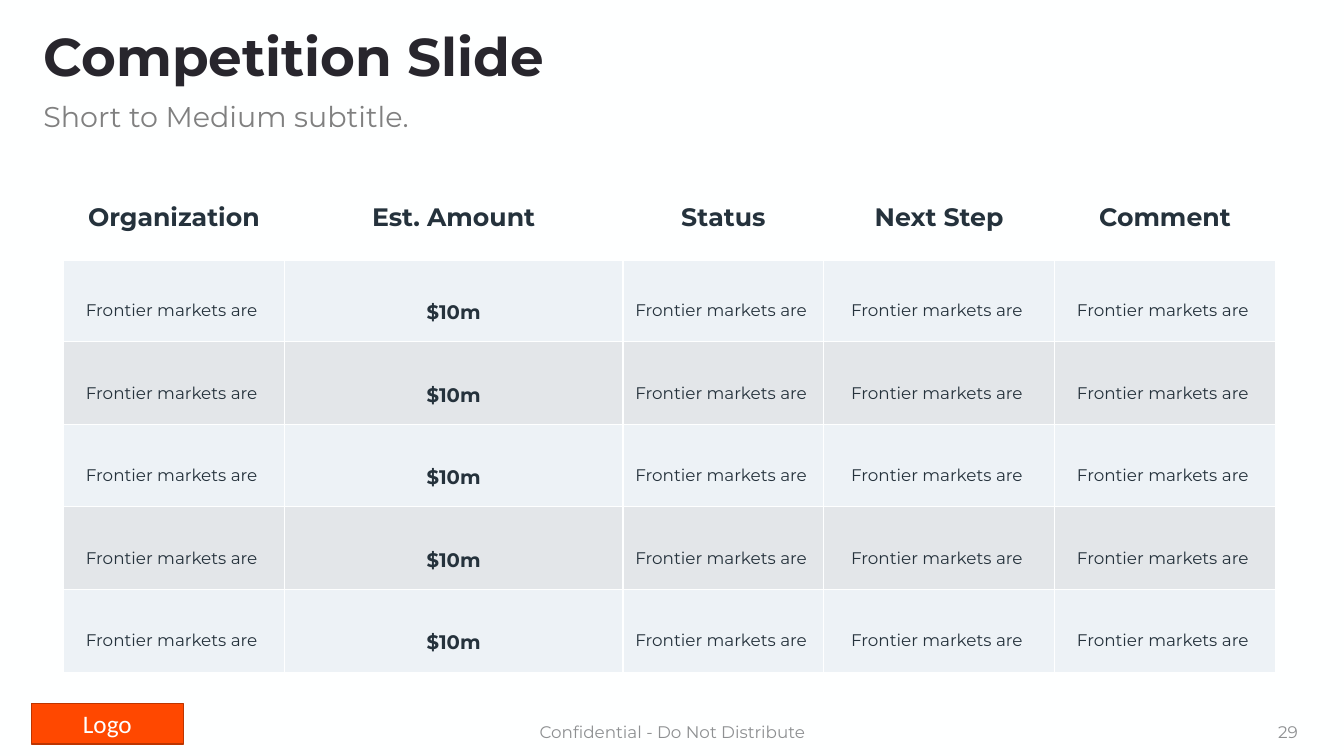
"""Build the competition slide with its table of organizations."""
from lxml.etree import SubElement
from pptx import Presentation
from pptx.dml.color import RGBColor
from pptx.enum.shapes import MSO_SHAPE
from pptx.enum.text import MSO_ANCHOR, MSO_AUTO_SIZE, PP_ALIGN
from pptx.oxml.ns import qn
from pptx.util import Inches, Pt

TITLE = "Competition Slide"
SUBTITLE = "Short to Medium subtitle."
HEADS = ["Organization", "Est. Amount", "Status", "Next Step", "Comment"]
NOTE = "Frontier markets are "
ROWS = [[NOTE, "$10m", NOTE, NOTE, NOTE]] * 5
WIDTHS = [2.19, 3.36, 1.99, 2.29, 2.19]
HEIGHT = 0.82
AMOUNT = 1
FOOTERS = [
    ("Confidential - Do Not Distribute", 4.42, 4.5, PP_ALIGN.CENTER),
    ("29", 9.97, 3, PP_ALIGN.RIGHT),
]

FONT = "Montserrat"
WHITE = RGBColor(0xFE, 0xFF, 0xFF)
BLACK = RGBColor(0x28, 0x26, 0x2D)
GRAY = RGBColor(0x80, 0x80, 0x80)
PALE = RGBColor(0x8E, 0x90, 0x92)
NAVY = RGBColor(0x25, 0x32, 0x3C)
ORANGE = RGBColor(0xFF, 0x48, 0x00)
RUST = RGBColor(0xBD, 0x35, 0x00)
BANDS = [RGBColor(0xBE, 0xCC, 0xDD), RGBColor(0x93, 0x9D, 0xA9)]


def write(frame, text, size, color, align, bold=False, font=FONT):
    frame.text = text
    frame.word_wrap = True
    frame.vertical_anchor = MSO_ANCHOR.MIDDLE
    line = frame.paragraphs[0]
    line.alignment = align
    for run in line.runs:
        run.font.name = font
        run.font.size = Pt(size)
        run.font.bold = bold
        run.font.color.rgb = color
    return line


def place(shape, left, top, width, height):
    shape.left, shape.top = Inches(left), Inches(top)
    shape.width, shape.height = Inches(width), Inches(height)


def edge(cell, row):
    props = cell._tc.get_or_add_tcPr()
    for side in "LRTB":
        thick = (row, side) in [(0, "B"), (1, "T")]
        line = SubElement(props, qn(f"a:ln{side}"), w=str(Pt(3 if thick else 1)))
        fill = SubElement(line, qn("a:solidFill"))
        SubElement(fill, qn("a:srgbClr"), val=str(WHITE))


def tint(cell, color):
    cell.fill.solid()
    cell.fill.fore_color.rgb = color
    shade = cell._tc.tcPr.find(qn("a:solidFill"))[0]
    SubElement(shade, qn("a:alpha"), val="25000")


def add_grid(slide):
    data = [HEADS] + ROWS
    grid = slide.shapes.add_table(
        len(data), len(HEADS), Inches(0.63), Inches(1.75),
        Inches(sum(WIDTHS)), Inches(HEIGHT * len(data))).table
    for col, width in zip(grid.columns, WIDTHS):
        col.width = Inches(width)
    for r, texts in enumerate(data):
        grid.rows[r].height = Inches(HEIGHT)
        for c, text in enumerate(texts):
            cell = grid.cell(r, c)
            edge(cell, r)
            strong = r == 0 or c == AMOUNT
            size = 18 if r == 0 else 14 if strong else 12
            write(cell.text_frame, text, size, NAVY, PP_ALIGN.CENTER, strong)
            cell.vertical_anchor = MSO_ANCHOR.MIDDLE
            if r == 0:
                cell.fill.background()
            else:
                cell.margin_top = Inches(0.29 if strong else 0.25)
                tint(cell, BANDS[(r - 1) % 2])


def add_heads(slide):
    title, body = slide.shapes.title, slide.placeholders[1]
    place(title, 0.33, 0.25, 12.63, 0.67)
    place(body, 0.33, 0.98, 12.63, 0.4)
    line = write(title.text_frame, TITLE, 38, BLACK, PP_ALIGN.LEFT, True)
    line.line_spacing = 0.9
    line = write(body.text_frame, SUBTITLE, 20.4, GRAY, PP_ALIGN.LEFT)
    line.line_spacing = 0.8
    line.space_before = Pt(0)
    props = line._p.get_or_add_pPr()
    props.set("marL", "0")
    props.set("indent", "0")
    SubElement(props, qn("a:buNone"))
    for shape in (title, body):
        shape.text_frame.auto_size = MSO_AUTO_SIZE.NONE


def add_foot(slide):
    logo = slide.shapes.add_shape(
        MSO_SHAPE.RECTANGLE, Inches(0.31), Inches(6.98), Inches(1.51), Inches(0.4))
    logo.shadow.inherit = False
    logo.fill.solid()
    logo.fill.fore_color.rgb = ORANGE
    logo.line.color.rgb = RUST
    logo.line.width = Pt(1)
    write(logo.text_frame, "Logo", 18, WHITE, PP_ALIGN.CENTER, font="Calibri")
    for text, left, width, align in FOOTERS:
        box = slide.shapes.add_textbox(
            Inches(left), Inches(7.06), Inches(width), Inches(0.4))
        write(box.text_frame, text, 12, PALE, align)


def main():
    deck = Presentation()
    deck.slide_width, deck.slide_height = Inches(13.33), Inches(7.5)
    slide = deck.slides.add_slide(deck.slide_layouts[1])
    slide.background.fill.solid()
    slide.background.fill.fore_color.rgb = WHITE
    add_heads(slide)
    add_grid(slide)
    add_foot(slide)
    deck.save("out.pptx")


if __name__ == "__main__":
    main()
